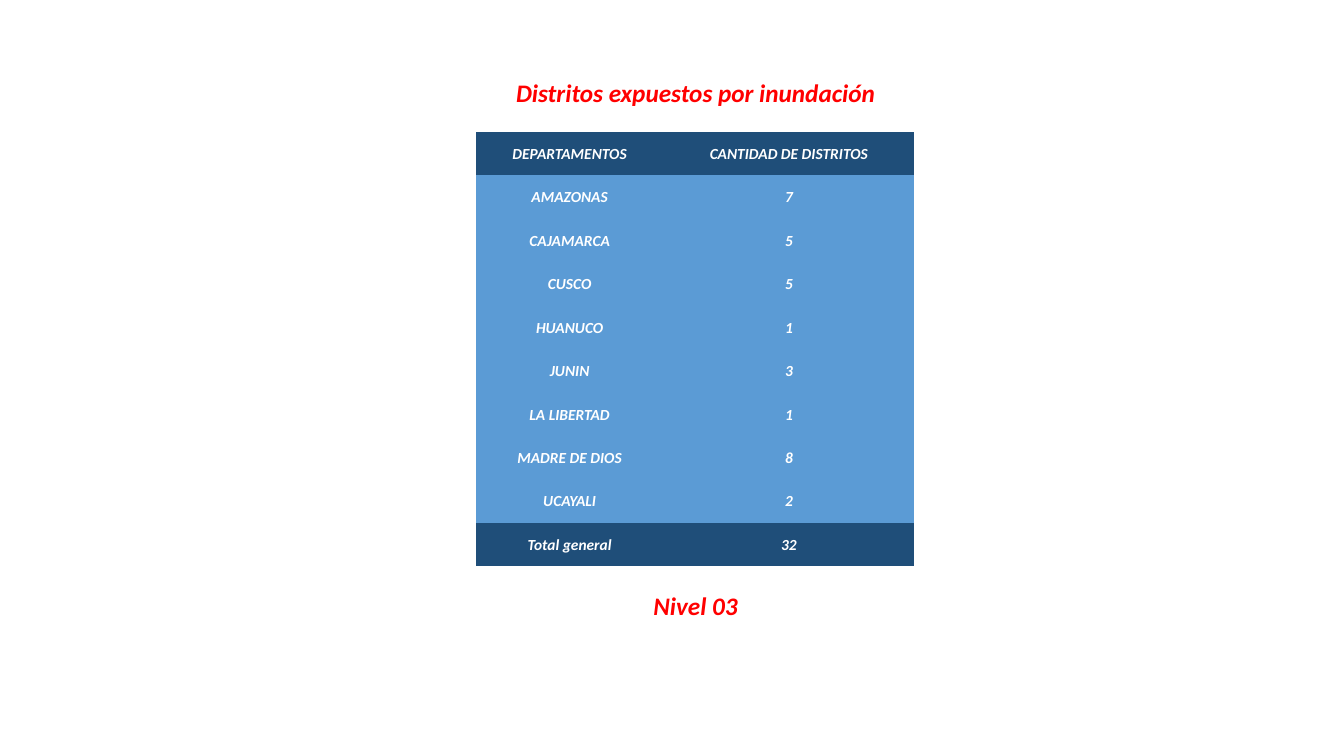
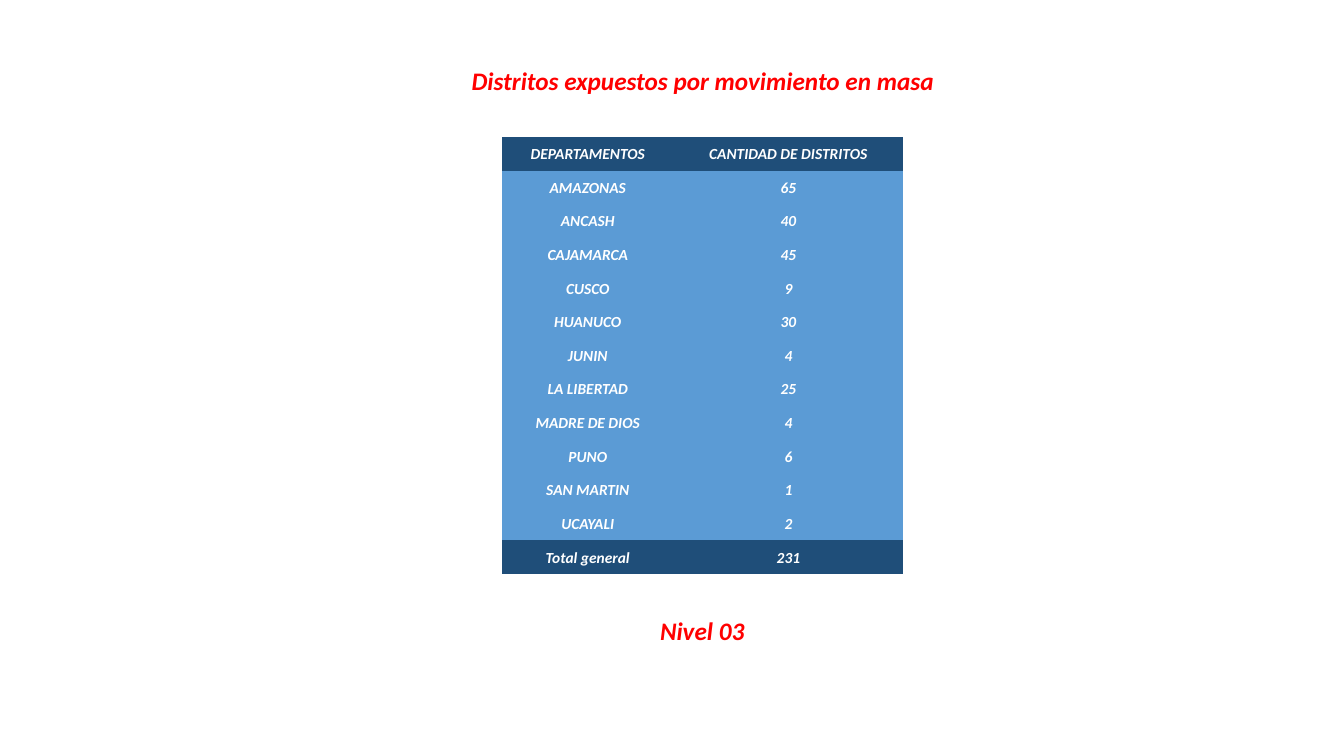
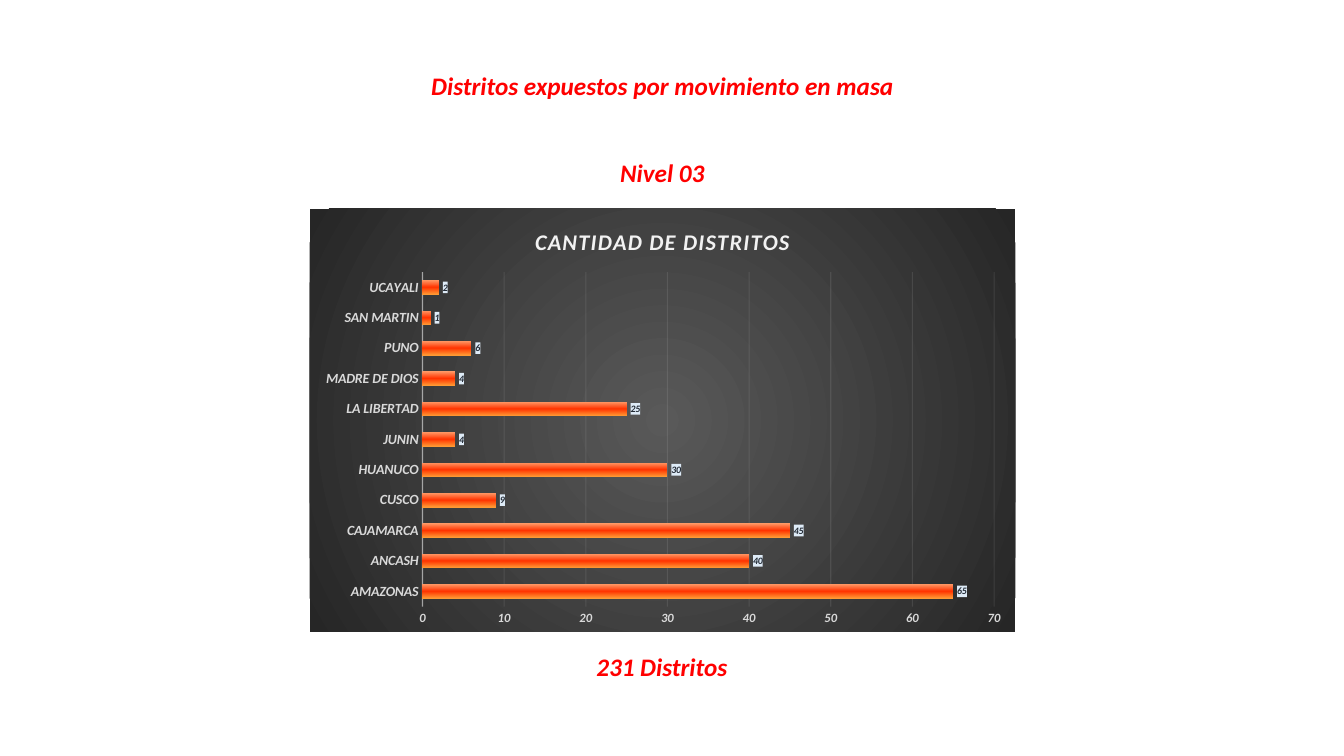
from pptx import Presentation
from pptx.chart.data import CategoryChartData
from pptx.dml.color import RGBColor
from pptx.enum.chart import XL_CHART_TYPE, XL_LABEL_POSITION, XL_TICK_MARK
from pptx.enum.text import MSO_ANCHOR, MSO_AUTO_SIZE, PP_ALIGN
from pptx.oxml import parse_xml
from pptx.oxml.ns import nsdecls
from pptx.util import Inches, Pt

CENTER = PP_ALIGN.CENTER
MIDDLE = MSO_ANCHOR.MIDDLE
NO_AUTOSIZE = MSO_AUTO_SIZE.NONE
BAR_CLUSTERED = XL_CHART_TYPE.BAR_CLUSTERED
OUTSIDE_END = XL_LABEL_POSITION.OUTSIDE_END
NO_TICK = XL_TICK_MARK.NONE

FONT = "Calibri"
RED = RGBColor(0xFF, 0x00, 0x00)
WHITE = RGBColor(0xFF, 0xFF, 0xFF)
NAVY = RGBColor(0x1F, 0x4E, 0x79)
BLUE = RGBColor(0x5B, 0x9B, 0xD5)
PALE = RGBColor(0xF2, 0xF2, 0xF2)
SILVER = RGBColor(0xD9, 0xD9, 0xD9)
INK = RGBColor(0x22, 0x2A, 0x35)
LABEL_BACK = RGBColor(0xDE, 0xEB, 0xF7)
CHART_BACK = [(0, RGBColor(0x59, 0x59, 0x59)), (100, RGBColor(0x26, 0x26, 0x26))]
BAR_COLOURS = [
    (0, RGBColor(0xFF, 0x99, 0x66)),
    (50, RGBColor(0xFF, 0x33, 0x00)),
    (100, RGBColor(0xFF, 0x99, 0x33)),
]
RADIAL = ('<a:path path="circle"><a:fillToRect l="50000" t="50000" '
          'r="50000" b="50000"/></a:path>')
VERTICAL = '<a:lin ang="5400000" scaled="0"/>'
PLAIN_TABLE = "{2D5ABB26-0587-4C30-8999-92F81FD0307C}"

QUANTITY = "CANTIDAD DE DISTRITOS"
HEADER = ("DEPARTAMENTOS", QUANTITY)
LEVEL = "Nivel 03"
FLOOD_TITLE = "Distritos expuestos por inundación"
LANDSLIDE_TITLE = "Distritos expuestos por movimiento en masa"
FLOOD = [
    ("AMAZONAS", 7), ("CAJAMARCA", 5), ("CUSCO", 5), ("HUANUCO", 1),
    ("JUNIN", 3), ("LA LIBERTAD", 1), ("MADRE DE DIOS", 8), ("UCAYALI", 2),
]
LANDSLIDE = [
    ("AMAZONAS", 65), ("ANCASH", 40), ("CAJAMARCA", 45), ("CUSCO", 9),
    ("HUANUCO", 30), ("JUNIN", 4), ("LA LIBERTAD", 25), ("MADRE DE DIOS", 4),
    ("PUNO", 6), ("SAN MARTIN", 1), ("UCAYALI", 2),
]
TABLE_PAGES = [
    dict(title=FLOOD_TITLE, title_at=(5, 0.72, 3.8, 0.4),
         level_at=(6.3, 5.81, 1.2, 0.4), data=FLOOD,
         table_at=(4.72, 1.31, 4.35, 4.31), first_column=1.86),
    dict(title=LANDSLIDE_TITLE, title_at=(4.55, 0.6, 4.84, 0.4),
         level_at=(6.13, 6.06, 1.67, 0.4), data=LANDSLIDE,
         table_at=(4.98, 1.36, 3.98, 4.34), first_column=1.7),
]


def total(data):
    return sum(count for _, count in data)


def style_font(font, size, colour):
    font.name = FONT
    font.size = Pt(size)
    font.bold = True
    font.italic = True
    font.color.rgb = colour


def write(frame, text, size, colour):
    para = frame.paragraphs[0]
    para.alignment = CENTER
    span = para.add_run()
    span.text = text
    style_font(span.font, size, colour)
    return span


def add_page(deck, title, title_at):
    page = deck.slides.add_slide(deck.slide_layouts[5])
    box = page.shapes.title
    box.left, box.top, box.width, box.height = map(Inches, title_at)
    box.text_frame.auto_size = NO_AUTOSIZE
    box.text_frame.word_wrap = False
    write(box.text_frame, title, 18, RED)
    return page


def add_caption(page, text, place):
    box = page.shapes.add_textbox(*map(Inches, place))
    box.text_frame.word_wrap = True
    write(box.text_frame, text, 18, RED)


def add_count_table(page, data, place, first_column):
    rows = [HEADER, *data, ("Total general", total(data))]
    frame = page.shapes.add_table(len(rows), len(HEADER), *map(Inches, place))
    frame.element.xpath(".//a:tableStyleId")[0].text = PLAIN_TABLE
    table = frame.table
    table.columns[0].width = Inches(first_column)
    table.columns[1].width = Inches(place[2] - first_column)
    for row_index, values in enumerate(rows):
        table.rows[row_index].height = Inches(place[3] / len(rows))
        edge_row = row_index in (0, len(rows) - 1)
        for column_index, value in enumerate(values):
            cell = table.cell(row_index, column_index)
            cell.fill.solid()
            cell.fill.fore_color.rgb = NAVY if edge_row else BLUE
            cell.vertical_anchor = MIDDLE
            cell.margin_left = cell.margin_right = cell.margin_top = Inches(0.01)
            cell.margin_bottom = 0
            write(cell.text_frame, str(value), 11, WHITE)


def chart_fill(fill):
    return parse_xml(f'<c:spPr {nsdecls("c", "a")}>{fill}<a:ln><a:noFill/></a:ln></c:spPr>')


def gradient(stops, direction):
    marks = "".join(
        f'<a:gs pos="{position * 1000}"><a:srgbClr val="{colour}"/></a:gs>'
        for position, colour in stops)
    return f'<a:gradFill rotWithShape="1"><a:gsLst>{marks}</a:gsLst>{direction}</a:gradFill>'


def style_line(line, width, opacity, colours):
    line.width = Pt(width)
    line.color.rgb = PALE
    for colour in colours():
        colour.append(parse_xml(f'<a:alpha {nsdecls("a")} val="{opacity * 1000}"/>'))


def set_plot_area(root, **fractions):
    area = root.xpath(".//c:plotArea")[0]
    for layout in area.xpath("./c:layout"):
        area.remove(layout)
    sizes = "".join(f'<c:{name} val="{value}"/>' for name, value in fractions.items())
    area.insert(0, parse_xml(
        f'<c:layout {nsdecls("c")}><c:manualLayout><c:layoutTarget val="inner"/>'
        f'<c:xMode val="edge"/><c:yMode val="edge"/>{sizes}</c:manualLayout></c:layout>'))


def add_count_chart(page, data, place):
    chart_data = CategoryChartData(number_format="#,##0")
    chart_data.categories = [name for name, _ in data]
    chart_data.add_series(QUANTITY, [count for _, count in data])
    chart = page.shapes.add_chart(BAR_CLUSTERED, *map(Inches, place), chart_data).chart
    root = chart.element
    chart.has_legend = False
    chart.font.name = FONT
    chart.font.size = Pt(10)

    chart.has_title = True
    span = write(chart.chart_title.text_frame, QUANTITY, 16, PALE)
    span.font._element.set("spc", "100")
    chart.chart_title.include_in_layout = False

    names, values = chart.category_axis, chart.value_axis
    for axis, size in ((names, 10), (values, 9)):
        axis.major_tick_mark = axis.minor_tick_mark = NO_TICK
        style_font(axis.tick_labels.font, size, SILVER)
    values.minimum_scale, values.maximum_scale, values.major_unit = 0, 70, 10
    values.format.line.fill.background()
    style_line(names.format.line, 1, 54,
               lambda: root.xpath(".//c:catAx/c:spPr//a:srgbClr"))
    style_line(values.major_gridlines.format.line, 0.75, 10,
               lambda: root.xpath(".//c:majorGridlines//a:srgbClr"))

    plot = chart.plots[0]
    plot.gap_width, plot.overlap, plot.vary_by_categories = 115, -20, False
    plot.has_data_labels = True
    labels = plot.data_labels
    labels.show_value = True
    labels.position = OUTSIDE_END
    labels.number_format = "#,##0"
    labels.number_format_is_linked = False
    style_font(labels.font, 7, INK)

    label_fill = f'<a:solidFill><a:srgbClr val="{LABEL_BACK}"/></a:solidFill>'
    root.xpath(".//c:dLbls/c:txPr")[0].addprevious(chart_fill(label_fill))
    bars = plot.series[0]
    bars.invert_if_negative = False
    bars.format.fill.solid()
    bar_format = root.xpath(".//c:ser/c:spPr")[0]
    bar_format.getparent().replace(
        bar_format, chart_fill(gradient(BAR_COLOURS, VERTICAL)))
    root.xpath("./c:chart")[0].addnext(chart_fill(gradient(CHART_BACK, RADIAL)))
    set_plot_area(root, x=0.16, y=0.15, w=0.81, h=0.79)


def main():
    deck = Presentation()
    deck.slide_width, deck.slide_height = Inches(13.33), Inches(7.5)
    for content in TABLE_PAGES:
        page = add_page(deck, content["title"], content["title_at"])
        add_caption(page, LEVEL, content["level_at"])
        add_count_table(page, content["data"], content["table_at"], content["first_column"])

    page = add_page(deck, LANDSLIDE_TITLE, (4.15, 0.65, 4.84, 0.4))
    add_caption(page, LEVEL, (6.04, 1.51, 1.06, 0.4))
    add_caption(page, f"{total(LANDSLIDE)} Distritos", (5.73, 6.41, 1.67, 0.4))
    add_count_chart(page, LANDSLIDE, (3.07, 2.07, 7, 4.2))
    deck.save("out.pptx")


if __name__ == "__main__":
    main()
